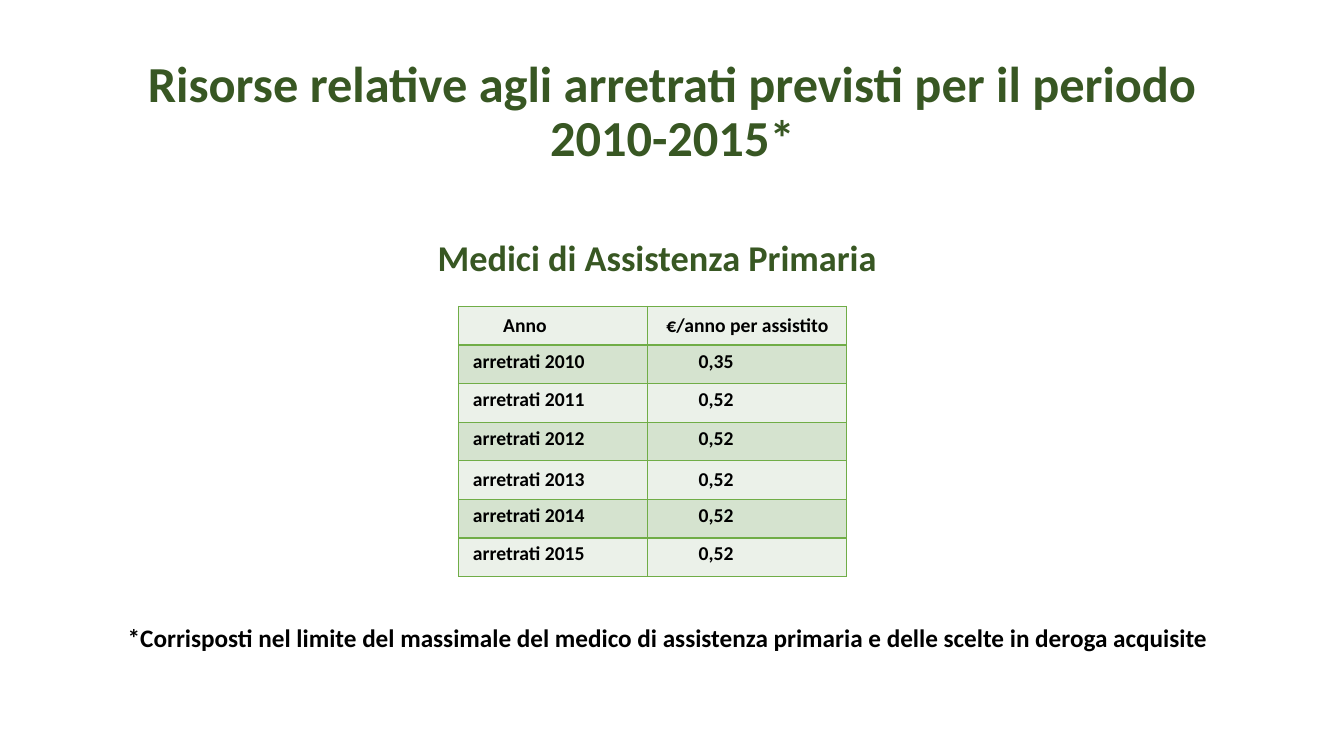
from lxml.etree import SubElement
from pptx import Presentation
from pptx.dml.color import RGBColor
from pptx.enum.text import MSO_ANCHOR as Anchor, MSO_AUTO_SIZE as AutoSize, PP_ALIGN as Align
from pptx.oxml.ns import qn
from pptx.util import Inches, Pt

COLORS = {
    "heading": "385723",
    "text": "000000",
    "border": "70AD47",
    "light": "EBF1E9",
    "dark": "D5E3CF",
}
HEADER = ("Anno", "€/anno per assistito")
ARREARS = [
    (2010, "0,35"),
    (2011, "0,52"),
    (2012, "0,52"),
    (2013, "0,52"),
    (2014, "0,52"),
    (2015, "0,52"),
]
COLUMN_WIDTHS = (1.87, 1.98)
ROW_HEIGHT = 0.383
HEADER_INDENTS = (0.44, 0.19)
ROW_INDENTS = (0.14, 0.51)


def rgb(name):
    return RGBColor.from_string(COLORS[name])


def style_paragraph(paragraph, size, color, align=Align.CENTER):
    paragraph.alignment = align
    font = paragraph.font
    font.name = "Calibri"
    font.size = Pt(size)
    font.bold = True
    font.color.rgb = rgb(color)


def place(box, left, top, width, height):
    box.left, box.top = Inches(left), Inches(top)
    box.width, box.height = Inches(width), Inches(height)


def fill_text(box, text, size, color, anchor=Anchor.TOP):
    frame = box.text_frame
    frame.text = text
    frame.word_wrap = True
    frame.auto_size = AutoSize.NONE
    frame.vertical_anchor = anchor
    paragraph = frame.paragraphs[0]
    style_paragraph(paragraph, size, color)
    return paragraph


def set_indent(paragraph, inches):
    properties = paragraph._p.get_or_add_pPr()
    properties.set("marL", str(Inches(inches)))
    properties.set("indent", "0")
    return properties


def add_borders(cell, top, bottom):
    properties = cell._tc.get_or_add_tcPr()
    for side, width in (("L", 1), ("R", 1), ("T", top), ("B", bottom)):
        line = SubElement(properties, qn(f"a:ln{side}"), w=str(Pt(width)))
        solid = SubElement(line, qn("a:solidFill"))
        SubElement(solid, qn("a:srgbClr"), val=COLORS["border"])


def write_cell(cell, text, indent, fill, top, bottom):
    cell.text = text
    cell.vertical_anchor = Anchor.MIDDLE
    cell.margin_left = cell.margin_right = 0
    cell.margin_top = cell.margin_bottom = 0
    paragraph = cell.text_frame.paragraphs[0]
    style_paragraph(paragraph, 14, "text", Align.LEFT)
    set_indent(paragraph, indent)
    add_borders(cell, top, bottom)
    cell.fill.solid()
    cell.fill.fore_color.rgb = rgb(fill)
    return paragraph


def add_arrears_table(slide):
    rows = [HEADER] + [(f"arretrati {year}", amount) for year, amount in ARREARS]
    last = len(rows) - 1
    table = slide.shapes.add_table(
        len(rows), len(HEADER), Inches(4.55), Inches(3.04),
        Inches(sum(COLUMN_WIDTHS)), Inches(ROW_HEIGHT * len(rows)),
    ).table
    table.first_row = table.horz_banding = False
    for column, width in zip(table.columns, COLUMN_WIDTHS):
        column.width = Inches(width)
    for r, values in enumerate(rows):
        table.rows[r].height = Inches(ROW_HEIGHT)
        indents = ROW_INDENTS if r else HEADER_INDENTS
        fill = "dark" if r % 2 else "light"
        top = 2 if r == last else 1
        bottom = 2 if r == last - 1 else 1
        for c, text in enumerate(values):
            paragraph = write_cell(table.cell(r, c), text, indents[c], fill, top, bottom)
            if r and values[0] != "arretrati 2013":
                paragraph.line_spacing = Pt(12.8)


def main():
    deck = Presentation()
    deck.slide_width, deck.slide_height = Inches(13.33), Inches(7.5)
    slide = deck.slides.add_slide(deck.slide_layouts[1])

    title = slide.shapes.title
    place(title, 0.92, 0.4, 11.5, 1.45)
    heading = fill_text(
        title, "Risorse relative agli arretrati previsti per il periodo 2010-2015*",
        36, "heading", Anchor.MIDDLE,
    )
    heading.line_spacing = 0.9

    subtitle = slide.placeholders[1]
    place(subtitle, 4.03, 2.37, 4.98, 0.47)
    category = fill_text(subtitle, "Medici di Assistenza Primaria", 25.9, "heading")
    category.line_spacing = 0.8
    category.space_before = Pt(10)
    SubElement(set_indent(category, 0), qn("a:buNone"))

    footnote = slide.shapes.add_textbox(Inches(1.08), Inches(6.12), Inches(11.09), Inches(0.4))
    fill_text(
        footnote,
        "*Corrisposti nel limite del massimale del medico di assistenza primaria "
        "e delle scelte in deroga acquisite",
        18, "text",
    )

    add_arrears_table(slide)
    deck.save("out.pptx")


if __name__ == "__main__":
    main()
